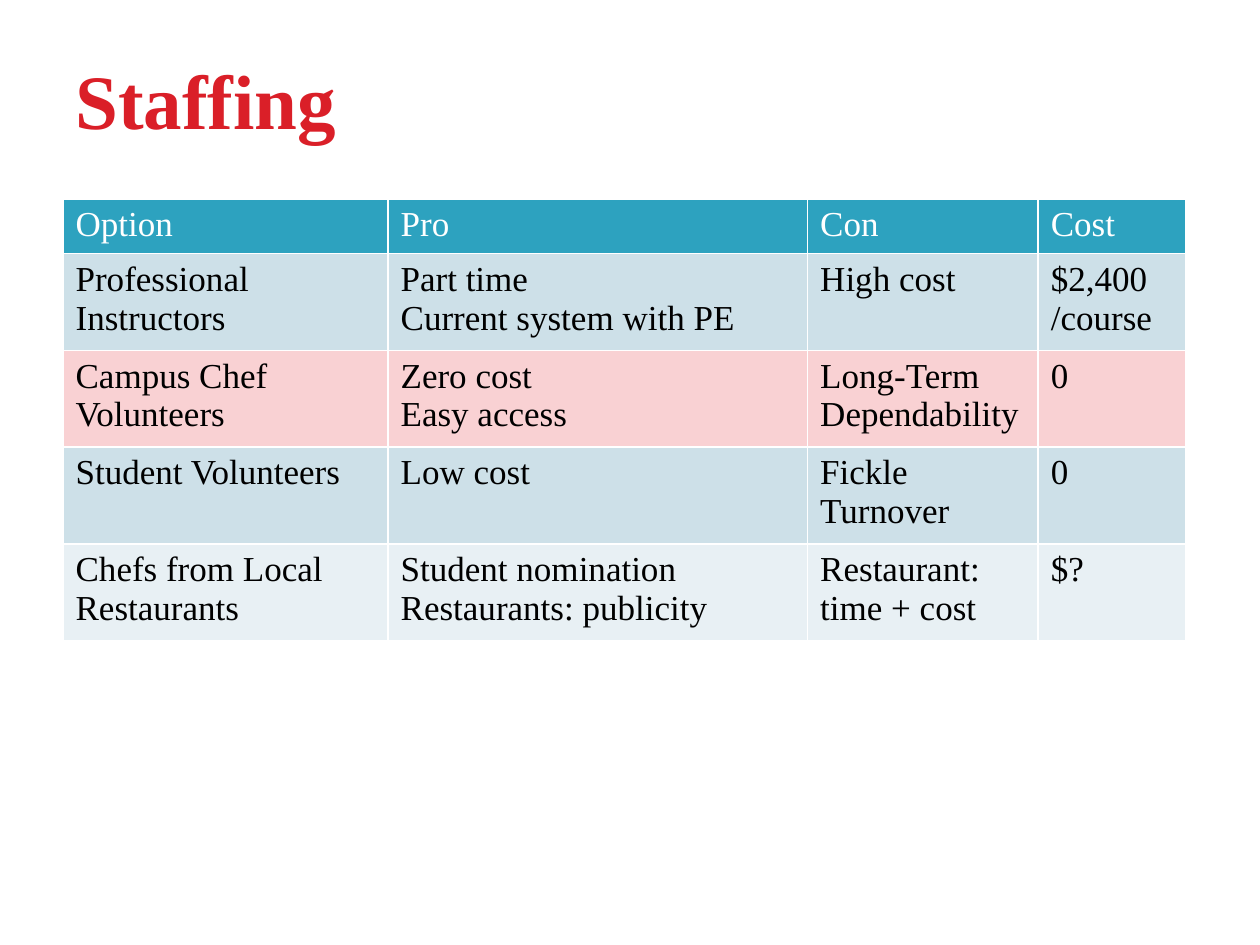
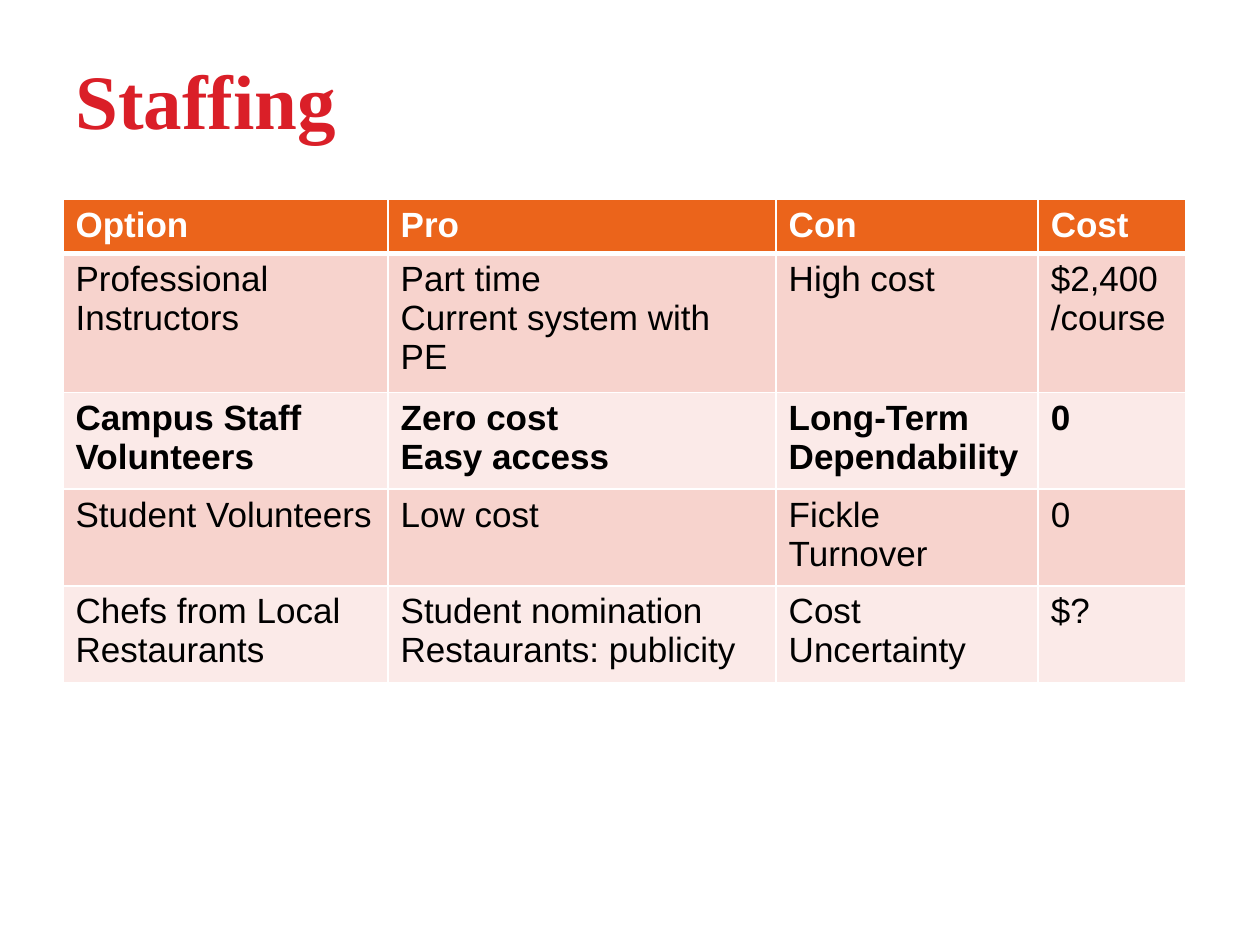
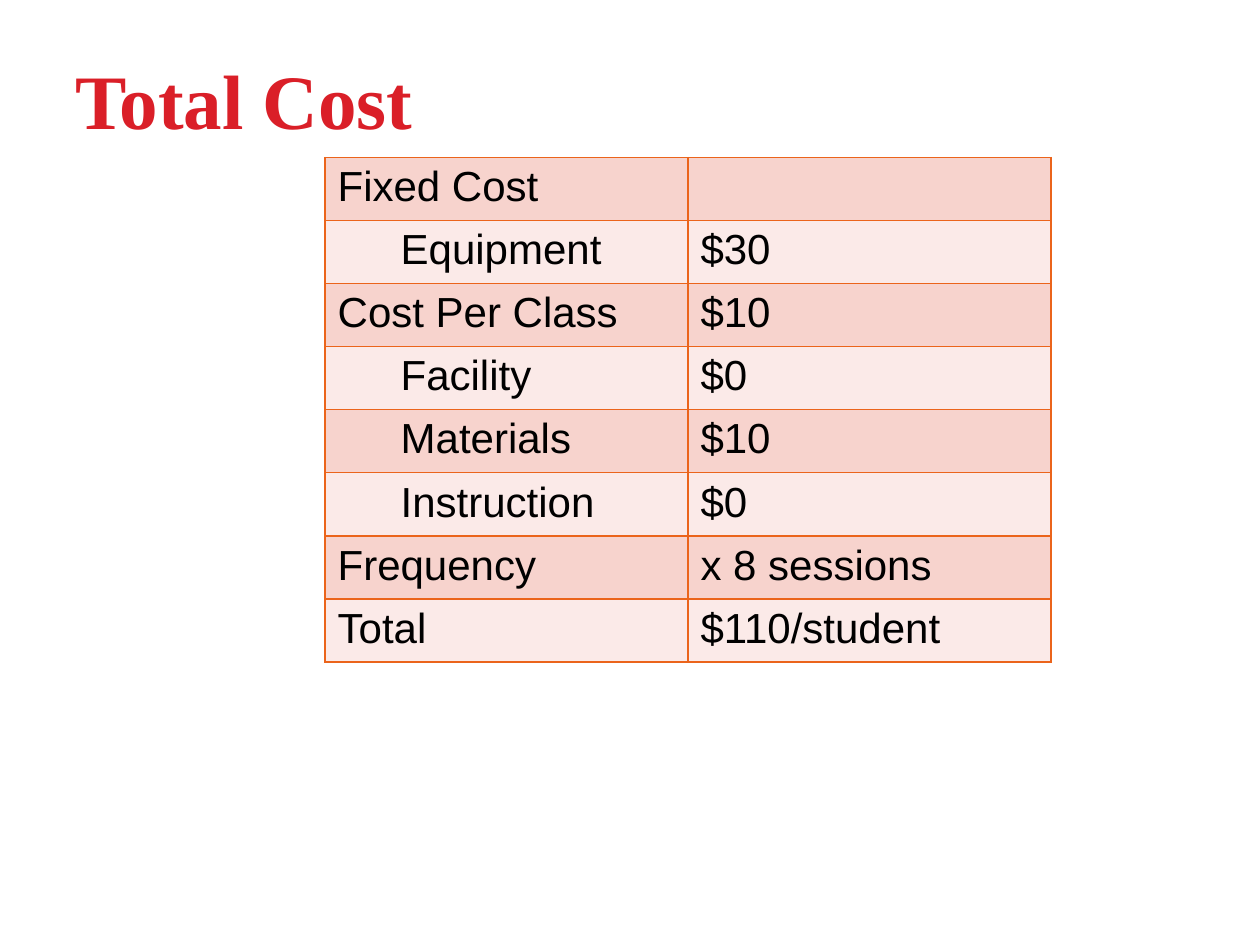
import pptx
import pptx.dml.color
import pptx.enum.text
import pptx.oxml
import pptx.oxml.ns
import pptx.util

Inches = pptx.util.Inches

COLORS = {
    "title": "DA1F28",
    "text": "000000",
    "white": "FFFFFF",
    "teal": "2DA2BF",
    "teal_mid": "CDE0E8",
    "teal_pale": "E8F0F4",
    "pink": "F9D1D3",
    "orange": "EB641B",
    "orange_mid": "F7D3CD",
    "orange_pale": "FBEAE8",
}
SERIF, SANS = "Times New Roman", "Arial"
HEADER = ["Option", "Pro", "Con", "Cost"]
PROFESSIONAL = ["Professional Instructors", "Part time\vCurrent system with PE",
                "High cost", "$2,400\n/course"]
STUDENTS = ["Student Volunteers", "Low cost", "Fickle\nTurnover", "0"]


def volunteers(group):
    """Return the row for a group of campus volunteers."""
    return [f"Campus {group} Volunteers", "Zero cost\nEasy access",
            "Long-Term Dependability", "0"]


def restaurants(con):
    """Return the row for local restaurant chefs with its drawback."""
    return ["Chefs from Local Restaurants",
            "Student nomination\nRestaurants: publicity", con, "$?"]


def rgb(name):
    """Return the named colour."""
    return pptx.dml.color.RGBColor.from_string(COLORS[name])


def write(tf, text, size=20, font=SANS, color="text", bold=False, indent=0):
    """Fill a text frame with formatted text, one paragraph per line."""
    tf.word_wrap = True
    tf.text = text
    for p in tf.paragraphs:
        if indent:
            p.level = 1
            pPr = p._p.get_or_add_pPr()
            pPr.set("marL", str(Inches(indent)))
            pPr.set("indent", "0")
        for r in p.runs:
            r.font.size = pptx.util.Pt(size)
            r.font.name = font
            r.font.bold = bold
            r.font.color.rgb = rgb(color)


def set_borders(cell, color, top=1, bottom=1):
    """Draw the four borders of a cell, widths in points."""
    tcPr = cell._tc.get_or_add_tcPr()
    ns = pptx.oxml.ns.nsdecls("a")
    widths = {"lnL": 1, "lnR": 1, "lnT": top, "lnB": bottom}
    for i, (tag, width) in enumerate(widths.items()):
        tcPr.insert(i, pptx.oxml.parse_xml(
            f'<a:{tag} {ns} w="{pptx.util.Pt(width)}"><a:solidFill>'
            f'<a:srgbClr val="{COLORS[color]}"/></a:solidFill></a:{tag}>'))


def add_title(s, text, x=0.5, y=0.3, w=9, h=1.25):
    """Add the slide title."""
    tf = s.shapes.add_textbox(Inches(x), Inches(y), Inches(w), Inches(h)).text_frame
    tf.margin_top = Inches(0.12)
    tf.vertical_anchor = pptx.enum.text.MSO_ANCHOR.TOP
    write(tf, text, size=44, font=SERIF, color="title", bold=True)


def add_grid(s, x, y, cols, heights):
    """Add a plain table with the given column widths and row heights."""
    table = s.shapes.add_table(len(heights), len(cols), Inches(x), Inches(y),
                               Inches(sum(cols)), Inches(sum(heights))).table
    table.first_row = table.horz_banding = False
    for col, w in zip(table.columns, cols):
        col.width = Inches(w)
    for row, h in zip(table.rows, heights):
        row.height = Inches(h)
    return table


def fill_cell(cell, fill):
    """Give a cell a solid fill."""
    cell.fill.solid()
    cell.fill.fore_color.rgb = rgb(fill)


def staffing_slide(prs, rows, cols, heights, fills, font, rule=1,
                   bold_rows=(), x=0.5, y=1.58):
    """Build a slide comparing the staffing options."""
    s = prs.slides.add_slide(prs.slide_layouts[6])
    add_title(s, "Staffing")
    table = add_grid(s, x, y, cols, heights)
    for i, (texts, fill) in enumerate(zip(rows, fills)):
        for j, text in enumerate(texts):
            cell = table.cell(i, j)
            write(cell.text_frame, text, font=font, bold=i in bold_rows,
                  color="text" if i else "white")
            fill_cell(cell, fill)
            set_borders(cell, "white", top=rule if i == 1 else 1,
                        bottom=rule if i == 0 else 1)


def cost_slide(prs, items, x=2.58, y=1.25, col_w=2.88, row_h=0.47):
    """Build the slide that adds up the cost per student."""
    s = prs.slides.add_slide(prs.slide_layouts[6])
    add_title(s, "Total Cost")
    table = add_grid(s, x, y, [col_w] * 2, [row_h] * len(items))
    for i, (label, value, indent) in enumerate(items):
        for j, text in enumerate((label, value)):
            cell = table.cell(i, j)
            write(cell.text_frame, text, size=24, indent=0 if j else indent)
            fill_cell(cell, "orange_pale" if i % 2 else "orange_mid")
            set_borders(cell, "orange")


def main():
    """Build and save the presentation."""
    prs = pptx.Presentation()
    prs.slide_width, prs.slide_height = Inches(10), Inches(7.5)
    staffing_slide(
        prs,
        [HEADER, PROFESSIONAL, volunteers("Chef"), STUDENTS,
         restaurants("Restaurant: time + cost")],
        cols=[2.58, 3.33, 1.83, 1.17], heights=[0.41] + [0.71] * 4,
        fills=["teal", "teal_mid", "pink", "teal_mid", "teal_pale"], font=SERIF)
    staffing_slide(
        prs,
        [HEADER, PROFESSIONAL, volunteers("Staff"), STUDENTS,
         restaurants("Cost\nUncertainty")],
        cols=[2.58, 3.08, 2.08, 1.17], heights=[0.41, 1.03] + [0.71] * 3,
        fills=["orange"] + ["orange_mid", "orange_pale"] * 2, font=SANS,
        rule=3, bold_rows=(0, 2))
    cost_slide(prs, [
        ("Fixed Cost", "", 0),
        ("Equipment", "$30", 0.5),
        ("Cost Per Class", "$10", 0),
        ("Facility", "$0", 0.5),
        ("Materials", "$10", 0.5),
        ("Instruction", "$0", 0.5),
        ("Frequency", "x 8 sessions", 0),
        ("Total", "$110/student", 0),
    ])
    prs.save("out.pptx")


if __name__ == "__main__":
    main()
